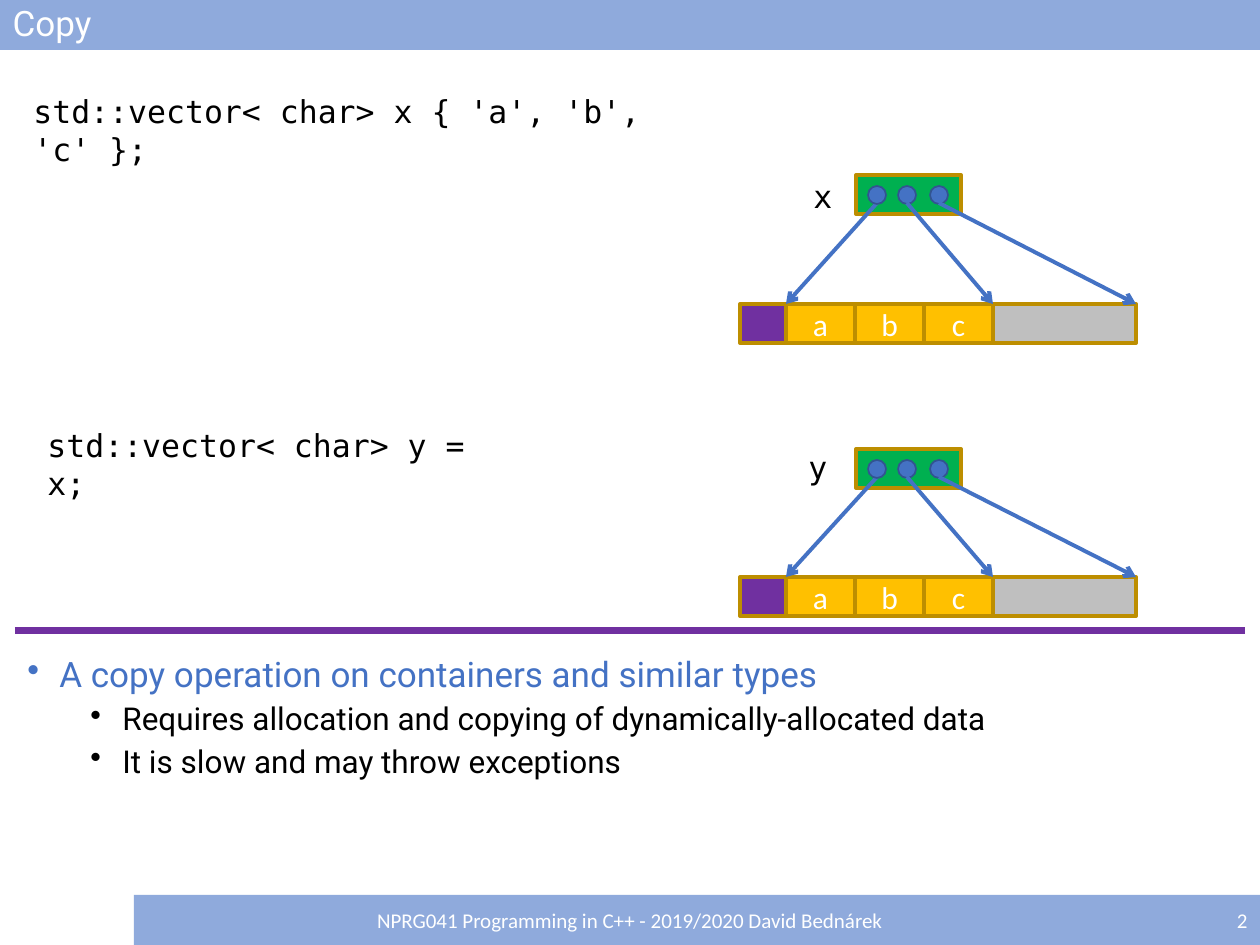
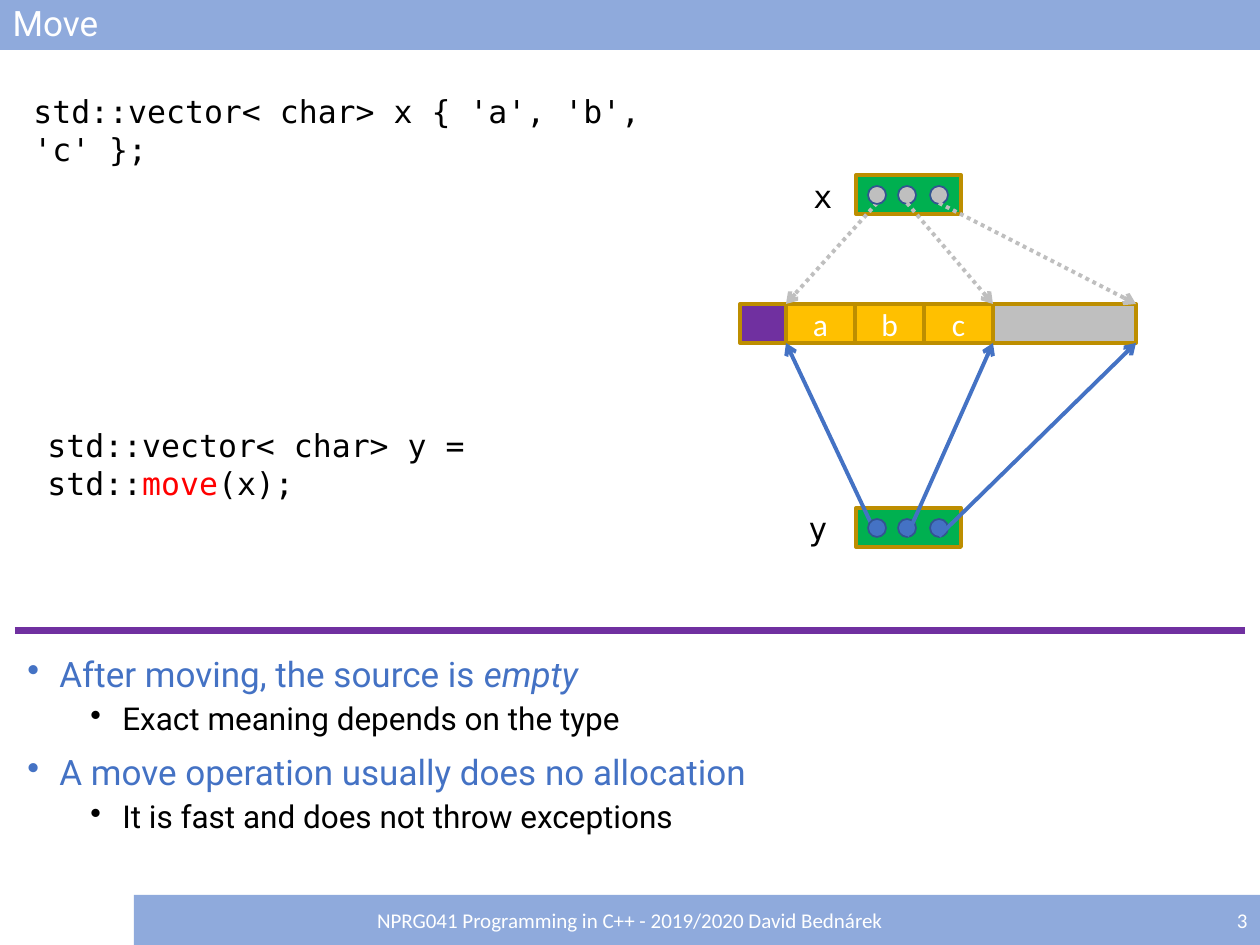
from dataclasses import dataclass

from lxml.etree import SubElement
from pptx import Presentation
from pptx.dml.color import RGBColor
from pptx.enum.dml import MSO_LINE_DASH_STYLE as Dash
from pptx.enum.shapes import MSO_CONNECTOR as Connector, MSO_SHAPE as Preset
from pptx.enum.text import MSO_ANCHOR as Anchor, MSO_AUTO_SIZE as AutoSize, PP_ALIGN as Align
from pptx.oxml.ns import qn
from pptx.util import Emu, Pt

EMU_PER_PX = 914400 / 126
SLIDE_W, SLIDE_H = 1260, 945
BAND_H = 50
FOOTER_X, NUMBER_X = 134, 1126
FOOTER = "NPRG041 Programming in C++ - 2019/2020 David Bednárek"

COLORS = {
    "band": "8FAADC", "white": "FFFFFF", "black": "000000", "red": "FF0000",
    "blue": "4472C4", "dot_edge": "325491", "purple": "7030A0",
    "green": "00B050", "gold": "FFC000", "gold_edge": "BD8E00", "gray": "BFBFBF",
}
HEADING, BODY, CODE = "Roboto", "Calibri", "DejaVu Sans Mono"

# Geometry shared by all vector diagrams
ROW_H = 39
HANDLE_X, HANDLE_W = 856, 105
DOT_CENTERS, DOT_SIZE, DOT_DROP, ARROW_DROP = (877, 907, 939), 18, 11, 28
PREFIX_X, CELLS_X, CELL_W, BUFFER_END = 740, 786, 69, 1136
ELEMENTS = "abc"
SPARE_X = CELLS_X + CELL_W * len(ELEMENTS)


@dataclass(frozen=True)
class Run:
    text: str
    color: str | None = None
    italic: bool = False


@dataclass(frozen=True)
class Bullet:
    runs: tuple[Run, ...]
    level: int = 0


@dataclass(frozen=True)
class Statement:
    left: int
    top: int
    width: int
    runs: tuple[Run, ...]


@dataclass(frozen=True)
class Vector:
    label: str
    label_x: int
    label_y: int
    handle_y: int
    target_y: int
    owns_buffer: bool = True
    emptied: bool = False


@dataclass(frozen=True)
class Lesson:
    title: str
    number: int
    statements: tuple[Statement, ...]
    vectors: tuple[Vector, ...]
    bullets: tuple[Bullet, ...]


def px(length: float) -> Emu:
    return Emu(round(length * EMU_PER_PX))


def rgb(color: str) -> RGBColor:
    return RGBColor.from_string(COLORS[color])


def write(paragraph, content, *, size=18, font=BODY, color="white",
          align=Align.LEFT, spacing=None, before=None):
    """Fill a paragraph with one string or several runs."""
    paragraph.alignment = align
    paragraph.line_spacing = spacing
    if before is not None:
        paragraph.space_before = Pt(before)
    for part in (Run(content),) if isinstance(content, str) else content:
        run = paragraph.add_run()
        run.text = part.text
        run.font.name, run.font.size = font, Pt(size)
        run.font.italic = part.italic
        run.font.color.rgb = rgb(part.color or color)


def add_block(slide, left, top, width, height, fill, edge=None, weight=2.25,
              preset=Preset.RECTANGLE, text=None, **text_format):
    block = slide.shapes.add_shape(preset, px(left), px(top), px(width), px(height))
    block.shadow.inherit = False
    block.fill.solid()
    block.fill.fore_color.rgb = rgb(fill)
    if edge:
        block.line.color.rgb = rgb(edge)
        block.line.width = Pt(weight)
    else:
        block.line.fill.background()
    if text:
        block.text_frame.vertical_anchor = Anchor.MIDDLE
        write(block.text_frame.paragraphs[0], text, **text_format)


def add_line(slide, start, end, color, weight, arrow=False, dash=None):
    line = slide.shapes.add_connector(Connector.STRAIGHT, *map(px, (*start, *end)))
    line.line.color.rgb = rgb(color)
    line.line.width = Pt(weight)
    if dash:
        line.line.dash_style = dash
    if arrow:
        SubElement(line.line._get_or_add_ln(), qn("a:tailEnd"), type="arrow")
    SubElement(line._element.spPr, qn("a:effectLst"))


def add_text_box(slide, left, top, width, height):
    frame = slide.shapes.add_textbox(px(left), px(top), px(width), px(height)).text_frame
    frame.word_wrap = True
    return frame


def add_code(slide, left, top, width, content):
    frame = add_text_box(slide, left, top, width, BAND_H)
    write(frame.paragraphs[0], content, font=CODE, color="black")


def add_frame(slide, lesson: Lesson):
    # Title band
    title = slide.shapes.title
    title.left, title.top, title.width, title.height = map(px, (0, 0, SLIDE_W, BAND_H))
    title.fill.solid()
    title.fill.fore_color.rgb = rgb("band")
    title.text_frame.auto_size = AutoSize.NONE
    title.text_frame.vertical_anchor = Anchor.MIDDLE
    write(title.text_frame.paragraphs[0], lesson.title, size=20, font=HEADING, spacing=0.9)
    # Divider and footer band
    add_line(slide, (15, 631), (1245, 631), "purple", 4)
    footer_y = SLIDE_H - BAND_H
    add_block(slide, NUMBER_X, footer_y, SLIDE_W - NUMBER_X, BAND_H, "band",
              text=str(lesson.number), size=12, align=Align.RIGHT)
    add_block(slide, FOOTER_X, footer_y, NUMBER_X - FOOTER_X, BAND_H, "band",
              text=FOOTER, size=12, align=Align.CENTER)


def add_bullets(slide, bullets: tuple[Bullet, ...]):
    frame = add_text_box(slide, 15, 651, 1230, 238)
    for index, bullet in enumerate(bullets):
        paragraph = frame.add_paragraph() if index else frame.paragraphs[0]
        size, color, before, margin = ((20, "blue", 10, 32), (18, "black", 5, 95))[bullet.level]
        paragraph.level = bullet.level
        write(paragraph, bullet.runs, size=size, font=HEADING, color=color,
              spacing=0.9, before=before)
        properties = paragraph._p.get_or_add_pPr()
        properties.set("marL", str(px(margin)))
        properties.set("indent", str(px(-32)))
        SubElement(properties, qn("a:buChar"), char="•")


def add_buffer(slide, top):
    for index, element in enumerate(ELEMENTS):
        add_block(slide, CELLS_X + index * CELL_W, top, CELL_W, ROW_H, "gold", "gold_edge",
                  text=element, align=Align.CENTER)
    add_block(slide, SPARE_X, top, BUFFER_END - SPARE_X, ROW_H, "gray", "gold_edge")
    add_block(slide, PREFIX_X, top, CELLS_X - PREFIX_X, ROW_H, "purple", "gold_edge")


def add_vector(slide, vector: Vector):
    if vector.owns_buffer:
        add_buffer(slide, vector.target_y)
    add_block(slide, HANDLE_X, vector.handle_y, HANDLE_W, ROW_H, "green", "gold_edge")
    add_code(slide, vector.label_x, vector.label_y, 43, vector.label)
    color, dash = ("gray", Dash.ROUND_DOT) if vector.emptied else ("blue", None)

    # The first arrow lies below the dots, the others above them
    arrows = list(zip(DOT_CENTERS, (CELLS_X, SPARE_X, BUFFER_END)))

    def point(pairs):
        for start_x, end_x in pairs:
            add_line(slide, (start_x, vector.handle_y + ARROW_DROP),
                     (end_x, vector.target_y), color, 2.25, arrow=True, dash=dash)

    point(arrows[:1])
    for center in DOT_CENTERS:
        add_block(slide, center - DOT_SIZE // 2, vector.handle_y + DOT_DROP, DOT_SIZE,
                  DOT_SIZE, color, "dot_edge", 1, Preset.OVAL)
    point(arrows[1:])


DECLARE_X = Statement(21, 86, 706, (Run("std::vector< char> x { 'a', 'b', 'c' };"),))

LESSONS = (
    Lesson(
        "Copy", 2,
        (DECLARE_X, Statement(35, 420, 461, (Run("std::vector< char> y = x;"),))),
        (Vector("x", 801, 171, 175, 304), Vector("y", 796, 442, 449, 577)),
        (Bullet((Run("A copy operation on containers and similar types"),)),
         Bullet((Run("Requires allocation and copying of dynamically-allocated data"),), 1),
         Bullet((Run("It is slow and may throw exceptions"),), 1)),
    ),
    Lesson(
        "Move", 3,
        (DECLARE_X, Statement(35, 420, 654, (
            Run("std::vector< char> y = std::"), Run("move", "red"), Run("(x);")))),
        (Vector("x", 801, 171, 175, 304, emptied=True),
         Vector("y", 796, 503, 508, 304 + ROW_H, owns_buffer=False)),
        (Bullet((Run("After moving, the source is "), Run("empty", italic=True))),
         Bullet((Run("Exact meaning depends on the type"),), 1),
         Bullet((Run("A move operation usually does no allocation"),)),
         Bullet((Run("It is fast and does not throw exceptions"),), 1)),
    ),
)


def main():
    deck = Presentation()
    deck.slide_width, deck.slide_height = px(SLIDE_W), px(SLIDE_H)
    title_only = deck.slide_layouts[5]
    for lesson in LESSONS:
        slide = deck.slides.add_slide(title_only)
        add_frame(slide, lesson)
        add_bullets(slide, lesson.bullets)
        for statement in lesson.statements:
            add_code(slide, statement.left, statement.top, statement.width, statement.runs)
        for vector in lesson.vectors:
            add_vector(slide, vector)
    deck.save("out.pptx")


if __name__ == "__main__":
    main()
